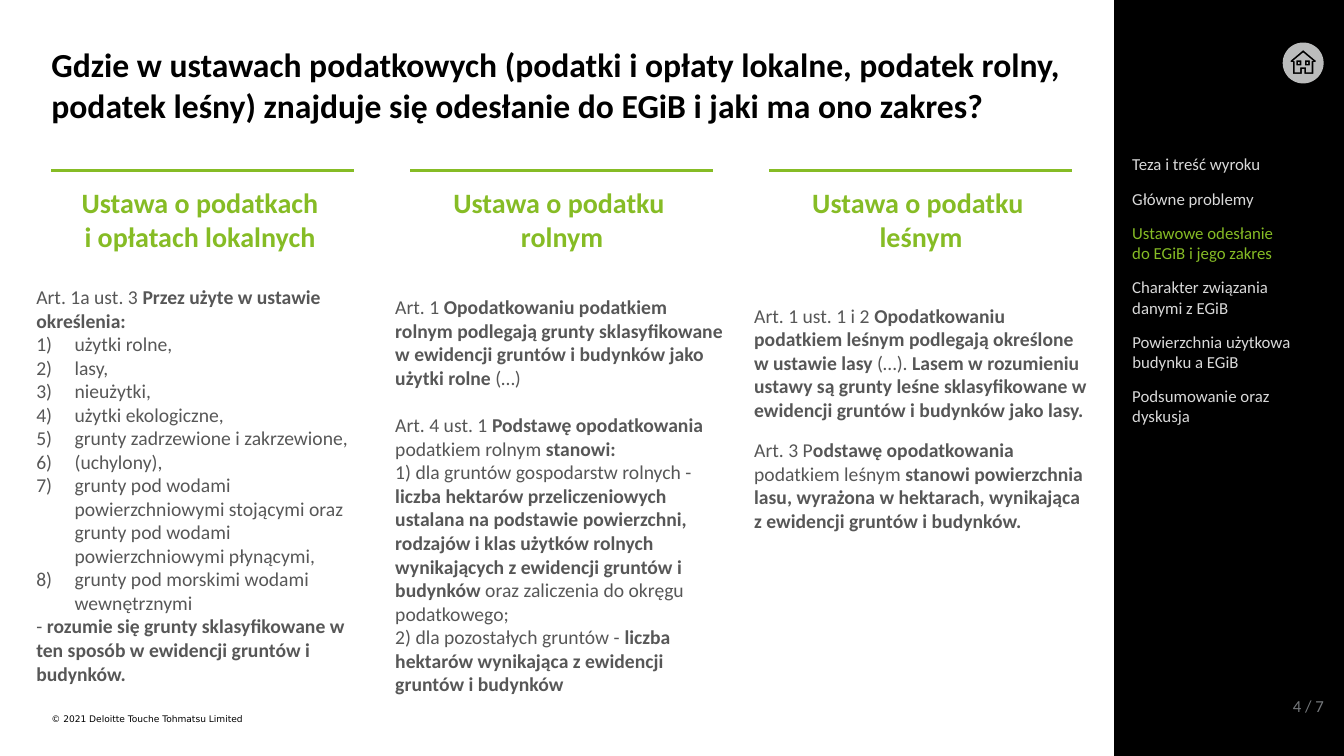
import math
from lxml import etree
from pptx import Presentation, util as u
from pptx.dml.color import RGBColor
from pptx.enum import shapes, text
from pptx.oxml.ns import qn

GREEN, GREY, BLACK = "86BC25", "575757", "000000"
LIGHT, SILVER, SLATE = "D9D9D9", "BBBCBC", "75787B"
WIDTH, HEIGHT = 13.33, 7.5
PITCH, COLUMN_WIDTH = 3.56, 3.31
COLUMN_LEFT, RULE_LEFT = 0.36, 0.51
MENU_LEFT, MENU_LINE, MENU_GAP = 11.23, 0.2, 0.14

presentation = Presentation()
presentation.slide_width = u.Inches(WIDTH)
presentation.slide_height = u.Inches(HEIGHT)
slide = presentation.slides.add_slide(presentation.slide_layouts[6])


def add_box(left, top, width, height):
    """Add a wrapping text box without margins and return its text frame."""
    frame = slide.shapes.add_textbox(*map(u.Inches, (left, top, width, height))).text_frame
    frame.word_wrap = True
    frame.margin_left = frame.margin_right = frame.margin_top = frame.margin_bottom = 0
    return frame


def add_run(paragraph, words, size, color, bold=False, font="Calibri"):
    run = paragraph.add_run()
    run.text = words
    run.font.name, run.font.size, run.font.bold = font, u.Pt(size), bold
    run.font.color.rgb = RGBColor.from_string(color)


# Sidebar
sidebar_left = 11.05
sidebar = slide.shapes.add_shape(
    shapes.MSO_SHAPE.RECTANGLE, u.Inches(sidebar_left), 0,
    u.Inches(WIDTH - sidebar_left), u.Inches(HEIGHT))
sidebar.shadow.inherit = False
sidebar.fill.solid()
sidebar.fill.fore_color.rgb = RGBColor.from_string(BLACK)
sidebar.line.fill.background()

# Home button: nested outlines in thousandths of an inch around the disc centre
center_x, center_y, radius, steps = 12925, 625, 203, 72
disc = [(radius * math.cos(math.tau * i / steps), radius * math.sin(math.tau * i / steps))
        for i in range(steps)]
half_house = [(0, -128), (126, -22), (122, -8), (102, -8), (102, 108), (12, 108), (12, 60)]
half_inside = [(0, -104), (98, -22), (84, -18), (84, 92), (30, 92), (30, 44)]
outlines = [disc] + [half + [(-x, y) for x, y in reversed(half)]
                     for half in (half_house, half_inside)]
for window_x in (-42, 42):
    for reach in (25, 8):
        outlines.append([(window_x + x * reach, y * reach)
                         for x, y in ((-1, -1), (1, -1), (1, 1), (-1, 1))])
outlines = [[(center_x + x, center_y + y) for x, y in outline] for outline in outlines]
builder = slide.shapes.build_freeform(*outlines[0][0], scale=914.4)
builder.add_line_segments(outlines[0][1:])
for outline in outlines[1:]:
    builder.move_to(*outline[0])
    builder.add_line_segments(outline[1:])
home = builder.convert_to_shape()
home.shadow.inherit = False
home.fill.solid()
home.fill.fore_color.rgb = RGBColor.from_string(SILVER)
home.line.fill.background()

# Menu: label, lines, width, colour
menu = [
    ("Teza i treść wyroku", 1, 1.54, LIGHT),
    ("Główne problemy", 1, 1.54, LIGHT),
    ("Ustawowe odesłanie do EGiB i jego zakres", 2, 1.54, GREEN),
    ("Charakter związania danymi z EGiB", 2, 1.73, LIGHT),
    ("Powierzchnia użytkowa budynku a EGiB", 2, 1.81, LIGHT),
    ("Podsumowanie oraz dyskusja", 2, 1.73, LIGHT),
]
menu_top = 1.53
for label, lines, width, color in menu:
    frame = add_box(MENU_LEFT, menu_top, width, lines * MENU_LINE)
    add_run(frame.paragraphs[0], label, 12, color)
    menu_top += lines * MENU_LINE + MENU_GAP

page_number = add_box(11.24, 6.9, 1.89, 0.2).paragraphs[0]
page_number.alignment = text.PP_ALIGN.RIGHT
add_run(page_number, "4 / 7", 12, SLATE)

# Title and footer
title = add_box(RULE_LEFT, 0.44, 10.02, 0.81).paragraphs[0]
add_run(title, "Gdzie w ustawach podatkowych (podatki i opłaty lokalne, podatek rolny, "
        "podatek leśny) znajduje się odesłanie do EGiB i jaki ma ono zakres?", 24, BLACK, True)
footer = add_box(RULE_LEFT, 7.08, 5.86, 0.11).paragraphs[0]
add_run(footer, "© 2021 Deloitte Touche Tohmatsu Limited", 6.5, BLACK, font="DejaVu Sans")

# Columns: heading lines, then paragraphs as (space before, numbered, runs);
# the runs alternate between regular and bold
items = ["użytki rolne,", "lasy,", "nieużytki,", "użytki ekologiczne,",
         "grunty zadrzewione i zakrzewione,", "(uchylony),",
         "grunty pod wodami powierzchniowymi stojącymi oraz grunty pod wodami "
         "powierzchniowymi płynącymi,",
         "grunty pod morskimi wodami wewnętrznymi"]
columns = [
    (("Ustawa o podatkach ", "i opłatach lokalnych "), [
        (17, False, ["Art. 1a ust. 3 ", "Przez użyte w ustawie określenia:"]),
        *[(0, True, [item]) for item in items],
        (0, False, ["- ", "rozumie się grunty sklasyfikowane w ten sposób w ewidencji "
                    "gruntów i budynków."]),
    ]),
    (("Ustawa o podatku ", "rolnym"), [
        (24.4, False, ["Art. 1 ", "Opodatkowaniu podatkiem rolnym podlegają grunty "
                       "sklasyfikowane w ewidencji gruntów i budynków jako użytki rolne",
                       " (…)"]),
        (17, False, ["Art. 4 ust. 1 ", "Podstawę opodatkowania ", "podatkiem rolnym ",
                     "stanowi:"]),
        (0, False, ["1) dla gruntów gospodarstw rolnych - ",
                    "liczba hektarów przeliczeniowych ustalana na podstawie powierzchni, "
                    "rodzajów i klas użytków rolnych wynikających z ewidencji gruntów i "
                    "budynków", " oraz zaliczenia do okręgu podatkowego;"]),
        (0, False, ["2) dla pozostałych gruntów - ",
                    "liczba hektarów wynikająca z ewidencji gruntów i budynków"]),
    ]),
    (("Ustawa o podatku ", "leśnym"), [
        (30.4, False, ["Art. 1 ust. 1 i 2 ", "Opodatkowaniu podatkiem leśnym podlegają "
                       "określone w ustawie lasy", " (…). ",
                       "Lasem w rozumieniu ustawy są grunty leśne sklasyfikowane w "
                       "ewidencji gruntów i budynków jako lasy."]),
        (12, False, ["Art. 3 P", "odstawę opodatkowania ", "podatkiem leśnym ",
                     "stanowi powierzchnia lasu, wyrażona w hektarach, wynikająca "
                     "z ewidencji gruntów i budynków."]),
    ]),
]
for index, (heading_lines, provisions) in enumerate(columns):
    rule_left = RULE_LEFT + index * PITCH
    rule = slide.shapes.add_connector(
        shapes.MSO_CONNECTOR.STRAIGHT,
        *map(u.Inches, (rule_left, 1.69, rule_left + 3, 1.69)))
    rule.line.color.rgb = RGBColor.from_string(GREEN)
    rule.line.width = u.Pt(2)
    etree.SubElement(rule._element.spPr, qn("a:effectLst"))

    frame = add_box(COLUMN_LEFT + index * PITCH, 1.84, COLUMN_WIDTH, 4.63)
    heading = frame.paragraphs[0]
    heading.alignment = text.PP_ALIGN.CENTER
    heading.space_after = u.Pt(6)
    add_run(heading, heading_lines[0], 20, GREEN, True)
    heading.add_line_break()
    add_run(heading, heading_lines[1], 20, GREEN, True)

    for space, numbered, runs in provisions:
        paragraph = frame.add_paragraph()
        paragraph.space_before = u.Pt(space)
        if numbered:
            properties = paragraph._p.get_or_add_pPr()
            properties.set("marL", str(u.Inches(0.38)))
            properties.set("indent", str(-u.Inches(0.38)))
            etree.SubElement(properties, qn("a:buAutoNum"), type="arabicParenR")
        for position, words in enumerate(runs):
            add_run(paragraph, words, 14, GREY, position % 2 == 1)

presentation.save("out.pptx")
